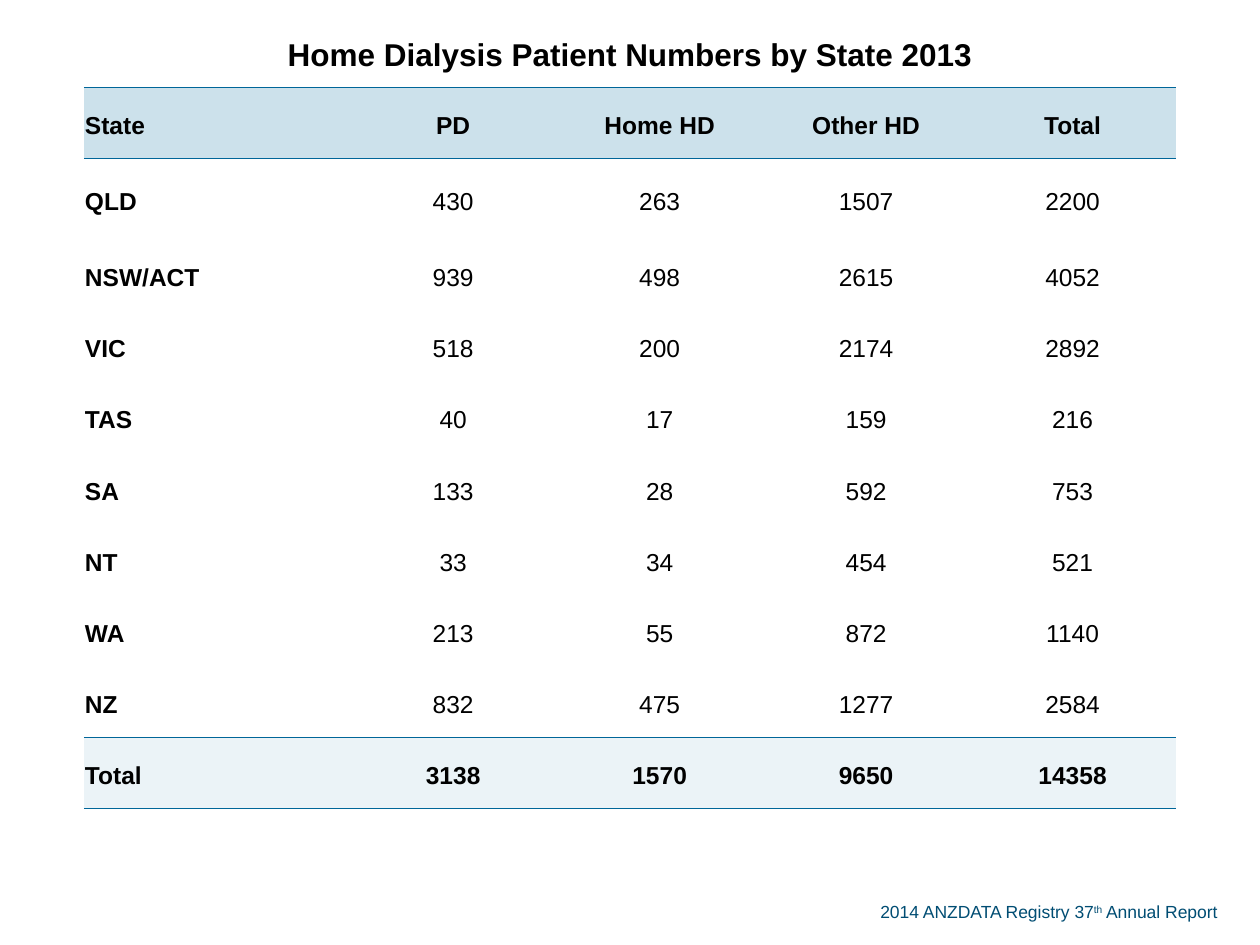
"""Build the slide on home dialysis patient numbers by state."""
import dataclasses
import typing

import lxml.etree
import pptx
import pptx.dml.color
import pptx.enum.text
import pptx.oxml.ns
import pptx.util

PX = pptx.util.Inches(1) // 126
CENTER = pptx.enum.text.PP_ALIGN.CENTER
LEFT = pptx.enum.text.PP_ALIGN.LEFT


@dataclasses.dataclass(frozen=True)
class Theme:
    font: str = "Arial"
    text: str = "000000"
    source: str = "004D73"
    rule: str = "006699"
    header: str = "CCE1EB"
    total: str = "EBF3F7"
    title_size: int = 18
    body_size: int = 14
    source_size: int = 10


@dataclasses.dataclass(frozen=True)
class Row:
    values: tuple
    bold: bool = False
    fill: typing.Optional[str] = None
    top: bool = False
    bottom: bool = False


THEME = Theme()
TITLE = "Home Dialysis Patient Numbers by State 2013"
ROWS = [
    Row(("State", "PD", "Home HD", "Other HD", "Total"), True, THEME.header, True, True),
    Row(("QLD", 430, 263, 1507, 2200), top=True),
    Row(("NSW/ACT", 939, 498, 2615, 4052)),
    Row(("VIC", 518, 200, 2174, 2892)),
    Row(("TAS", 40, 17, 159, 216)),
    Row(("SA", 133, 28, 592, 753)),
    Row(("NT", 33, 34, 454, 521)),
    Row(("WA", 213, 55, 872, 1140)),
    Row(("NZ", 832, 475, 1277, 2584), bottom=True),
    Row(("Total", 3138, 1570, 9650, 14358), True, THEME.total, True, True),
]


def set_font(para, size: int, color: str, bold: bool = False) -> None:
    para.font.name = THEME.font
    para.font.size = pptx.util.Pt(size)
    para.font.bold = bold
    para.font.color.rgb = pptx.dml.color.RGBColor.from_string(color)


def set_borders(cell, top: bool, bottom: bool) -> None:
    properties = cell._tc.get_or_add_tcPr()
    qn = pptx.oxml.ns.qn
    for side, shown in (("L", False), ("R", False), ("T", top), ("B", bottom)):
        line = lxml.etree.SubElement(properties, qn(f"a:ln{side}"), w="6350")
        if shown:
            fill = lxml.etree.SubElement(line, qn("a:solidFill"))
            lxml.etree.SubElement(fill, qn("a:srgbClr"), val=THEME.rule)
        else:
            lxml.etree.SubElement(line, qn("a:noFill"))


def write_cell(cell, text: str, row: Row, size: int, align, bold: bool) -> None:
    set_borders(cell, row.top, row.bottom)
    if row.fill:
        cell.fill.solid()
        cell.fill.fore_color.rgb = pptx.dml.color.RGBColor.from_string(row.fill)
    else:
        cell.fill.background()
    cell.margin_left = cell.margin_right = cell.margin_top = PX
    cell.margin_bottom = 0
    cell.vertical_anchor = pptx.enum.text.MSO_ANCHOR.MIDDLE
    cell.text = text
    para = cell.text_frame.paragraphs[0]
    para.alignment = align
    para.line_spacing = 1.19
    para.space_after = pptx.util.Pt(14)
    set_font(para, size, THEME.text, bold)


def add_patient_table(page) -> None:
    columns = len(ROWS[0].values)
    table = page.shapes.add_table(
        len(ROWS) + 1, columns, 84 * PX, 16 * PX, 1092 * PX, 793 * PX
    ).table
    table.first_row = table.horz_banding = False
    for index, column in enumerate(table.columns):
        column.width = 266 * PX if index == 0 else 826 * PX // (columns - 1)
    for index, line in enumerate(table.rows):
        line.height = 81 * PX if index == 2 else 712 * PX // len(ROWS)

    title_row = Row((TITLE,), bottom=True)
    for column in range(columns):
        text = TITLE if column == 0 else ""
        write_cell(table.cell(0, column), text, title_row, THEME.title_size, CENTER, True)
    table.cell(0, 0).merge(table.cell(0, columns - 1))

    for index, row in enumerate(ROWS, start=1):
        for column, value in enumerate(row.values):
            first = column == 0
            write_cell(table.cell(index, column), str(value), row, THEME.body_size,
                       LEFT if first else CENTER, first or row.bold)


def add_source(page) -> None:
    box = page.shapes.add_textbox(868 * PX, 895 * PX, 377 * PX, 34 * PX)
    box.text_frame.word_wrap = True
    para = box.text_frame.paragraphs[0]
    set_font(para, THEME.source_size, THEME.source)
    for text, baseline in (("2014 ANZDATA Registry 37", 0), ("th", 30000), (" Annual Report", 0)):
        span = para.add_run()
        span.text = text
        if baseline:
            span.font._element.set("baseline", str(baseline))


def main() -> None:
    deck = pptx.Presentation()
    deck.slide_width = pptx.util.Inches(10)
    deck.slide_height = pptx.util.Inches(7.5)
    page = deck.slides.add_slide(deck.slide_layouts[6])
    add_source(page)
    add_patient_table(page)
    deck.save("out.pptx")


if __name__ == "__main__":
    main()
